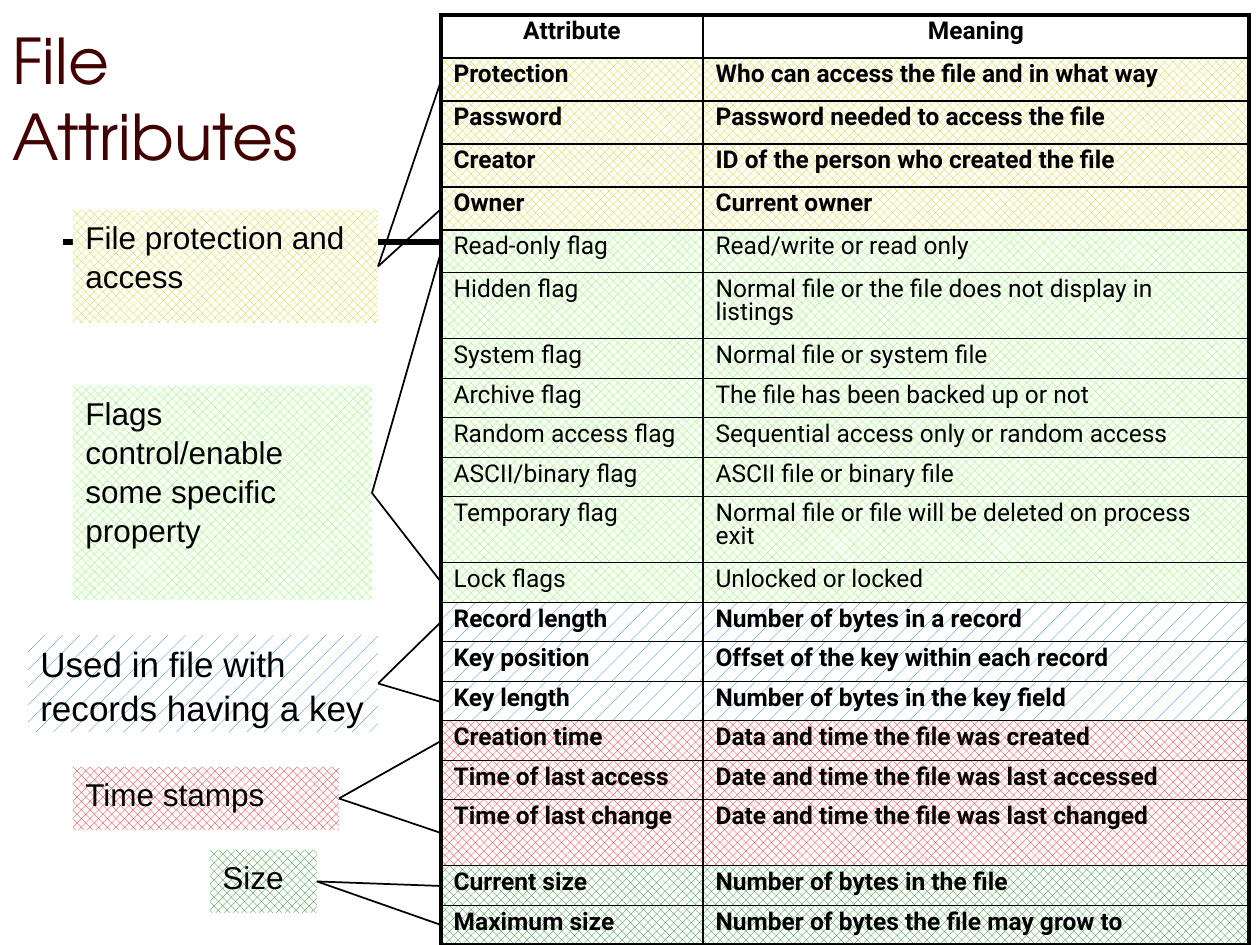
from dataclasses import dataclass

from lxml.etree import SubElement
from pptx import Presentation
from pptx.dml.color import RGBColor
from pptx.enum.dml import MSO_PATTERN as Pattern
from pptx.enum.shapes import MSO_CONNECTOR as Connector, MSO_SHAPE as Shape
from pptx.enum.text import MSO_ANCHOR as Anchor, PP_ALIGN as Align
from pptx.oxml.ns import qn
from pptx.util import Emu, Pt

EMU_PER_PX = 914400 / 126


@dataclass(frozen=True)
class Theme:
    title_font: str = "TeX Gyre Adventor"
    table_font: str = "Roboto"
    callout_font: str = "Arial"
    title_color: str = "420000"
    ink: str = "000000"
    paper: str = "FFFFFF"
    title_size: int = 36
    table_size: int = 14
    callout_size: int = 18
    large_callout_size: int = 20
    rule_width: float = 3
    outer_border: float = 2.25
    thin_line: float = 1


THEME = Theme()

# Each group: (pattern, colour), bold, rows
ACCESS = (Pattern.PERCENT_50, "CCCC00")
FLAGS = (Pattern.PERCENT_50, "66FF33")
KEYS = (Pattern.PERCENT_5, "0066CC")
TIMES = (Pattern.PERCENT_50, "FF0000")
SIZES = (Pattern.PERCENT_50, "008000")

GROUPS = [
    (None, True, [("Attribute", "Meaning")]),
    (ACCESS, True, [
        ("Protection", "Who can access the file and in what way"),
        ("Password", "Password needed to access the file"),
        ("Creator", "ID of the person who created the file"),
        ("Owner", "Current owner"),
    ]),
    (FLAGS, False, [
        ("Read-only flag", "Read/write or read only"),
        ("Hidden flag", "Normal file or the file does not display in listings"),
        ("System flag", "Normal file or system file"),
        ("Archive flag", "The file has been backed up or not"),
        ("Random access flag", "Sequential access only or random access"),
        ("ASCII/binary flag", "ASCII file or binary file"),
        ("Temporary flag", "Normal file or file will be deleted on process exit"),
        ("Lock flags", "Unlocked or locked"),
    ]),
    (KEYS, True, [
        ("Record length", "Number of bytes in a record"),
        ("Key position", "Offset of the key within each record"),
        ("Key length", "Number of bytes in the key field"),
    ]),
    (TIMES, True, [
        ("Creation time", "Data and time the file was created"),
        ("Time of last access", "Date and time the file was last accessed"),
        ("Time of last change", "Date and time the file was last changed"),
    ]),
    (SIZES, True, [
        ("Current size", "Number of bytes in the file"),
        ("Maximum size", "Number of bytes the file may grow to"),
    ]),
]

TABLE_LEFT, TABLE_TOP = 441, 15
COLUMN_WIDTHS = [262, 546]
TALL = [66]
PAIR = [40, 39]
ROW_HEIGHTS = [43] * 6 + TALL + PAIR * 2 + TALL + PAIR * 3 + TALL + PAIR

# Text, (left, top, width, height), fill, type size, heights where its two lines meet the table
CALLOUTS = [
    ("File protection and access", (73, 210, 305, 113), ACCESS, THEME.callout_size, (81, 209)),
    ("Flags control/enable some specific property", (73, 386, 299, 214), FLAGS,
     THEME.callout_size, (252, 582)),
    ("Used in file with records having a key", (28, 635, 350, 97), KEYS,
     THEME.large_callout_size, (622, 702)),
    ("Time stamps", (73, 767, 266, 63), TIMES, THEME.callout_size, (741, 833)),
    ("Size", (210, 850, 107, 63), SIZES, THEME.callout_size, (925, 886)),
]


def px(length):
    return Emu(round(length * EMU_PER_PX))


def rgb(color):
    return RGBColor.from_string(color)


def add_run(para, text, font, size, color=THEME.ink, bold=False):
    span = para.add_run()
    span.text = text
    span.font.name = font
    span.font.size = Pt(size)
    span.font.bold = bold
    span.font.color.rgb = rgb(color)


def fill_pattern(fill, pattern_fill):
    if pattern_fill is None:
        fill.background()
        return
    pattern, color = pattern_fill
    fill.patterned()
    fill.pattern = pattern
    fill.fore_color.rgb = rgb(color)
    fill.back_color.rgb = rgb(THEME.paper)


def add_line(page, start, end, width=THEME.thin_line):
    line = page.shapes.add_connector(Connector.STRAIGHT, *map(px, start + end))
    line.line.color.rgb = rgb(THEME.ink)
    line.line.width = Pt(width)
    SubElement(line._element.spPr, qn("a:effectLst"))


def add_title(page, text):
    box = page.shapes.add_textbox(*map(px, (0, 116, 413, 63)))
    frame = box.text_frame
    frame.word_wrap = True
    frame.vertical_anchor = Anchor.BOTTOM
    add_run(frame.paragraphs[0], text, THEME.title_font, THEME.title_size, THEME.title_color)


def set_borders(cell, outer_sides):
    properties = cell._tc.get_or_add_tcPr()
    for side in "LRTB":
        width = THEME.outer_border if side in outer_sides else THEME.thin_line
        border = SubElement(properties, qn(f"a:ln{side}"), w=str(Pt(width)))
        solid = SubElement(border, qn("a:solidFill"))
        SubElement(solid, qn("a:srgbClr"), val=THEME.ink)


def space_before_percent(para, percent):
    """Add spacing relative to the type size; call it after line spacing is set."""
    spacing = SubElement(para._p.get_or_add_pPr(), qn("a:spcBef"))
    SubElement(spacing, qn("a:spcPct"), val=str(percent * 1000))


def write_cell(cell, text, pattern_fill, bold, outer_sides):
    set_borders(cell, outer_sides)
    fill_pattern(cell.fill, pattern_fill)
    para = cell.text_frame.paragraphs[0]
    para.alignment = Align.LEFT if pattern_fill else Align.CENTER
    para.line_spacing = 0.8
    space_before_percent(para, 20)
    add_run(para, text, THEME.table_font, THEME.table_size, bold=bold)


def add_attribute_table(page):
    rows = [(pattern_fill, bold, texts) for pattern_fill, bold, group in GROUPS for texts in group]
    bounds = (TABLE_LEFT, TABLE_TOP, sum(COLUMN_WIDTHS), sum(ROW_HEIGHTS))
    table = page.shapes.add_table(len(rows), len(COLUMN_WIDTHS), *map(px, bounds)).table
    table.first_row = table.horz_banding = False
    for column, width in zip(table.columns, COLUMN_WIDTHS):
        column.width = px(width)
    for row, height in zip(table.rows, ROW_HEIGHTS):
        row.height = px(height)
    for index, (pattern_fill, bold, texts) in enumerate(rows):
        vertical = {0: "T", len(rows) - 1: "B"}.get(index, "")
        for column, (text, side) in enumerate(zip(texts, "LR")):
            write_cell(table.cell(index, column), text, pattern_fill, bold, side + vertical)


def add_callout(page, text, bounds, pattern_fill, size, targets):
    """Add a label and the two lines from its right middle to the table's edge."""
    left, top, width, height = bounds
    box = page.shapes.add_shape(Shape.RECTANGLE, *map(px, bounds))
    box.shadow.inherit = False
    box.line.fill.background()
    fill_pattern(box.fill, pattern_fill)
    frame = box.text_frame
    frame.word_wrap = True
    frame.vertical_anchor = Anchor.TOP
    para = frame.paragraphs[0]
    para.alignment = Align.LEFT
    para.line_spacing = 1.04
    add_run(para, text, THEME.callout_font, size)
    for target in targets:
        add_line(page, (left + width, top + height / 2), (TABLE_LEFT, target))


def main():
    deck = Presentation()
    deck.slide_width, deck.slide_height = px(1260), px(945)
    page = deck.slides.add_slide(deck.slide_layouts[6])
    add_line(page, (1207, 242), (63, 242), THEME.rule_width)
    add_title(page, "File Attributes")
    add_attribute_table(page)
    for callout in CALLOUTS:
        add_callout(page, *callout)
    deck.save("out.pptx")


if __name__ == "__main__":
    main()
